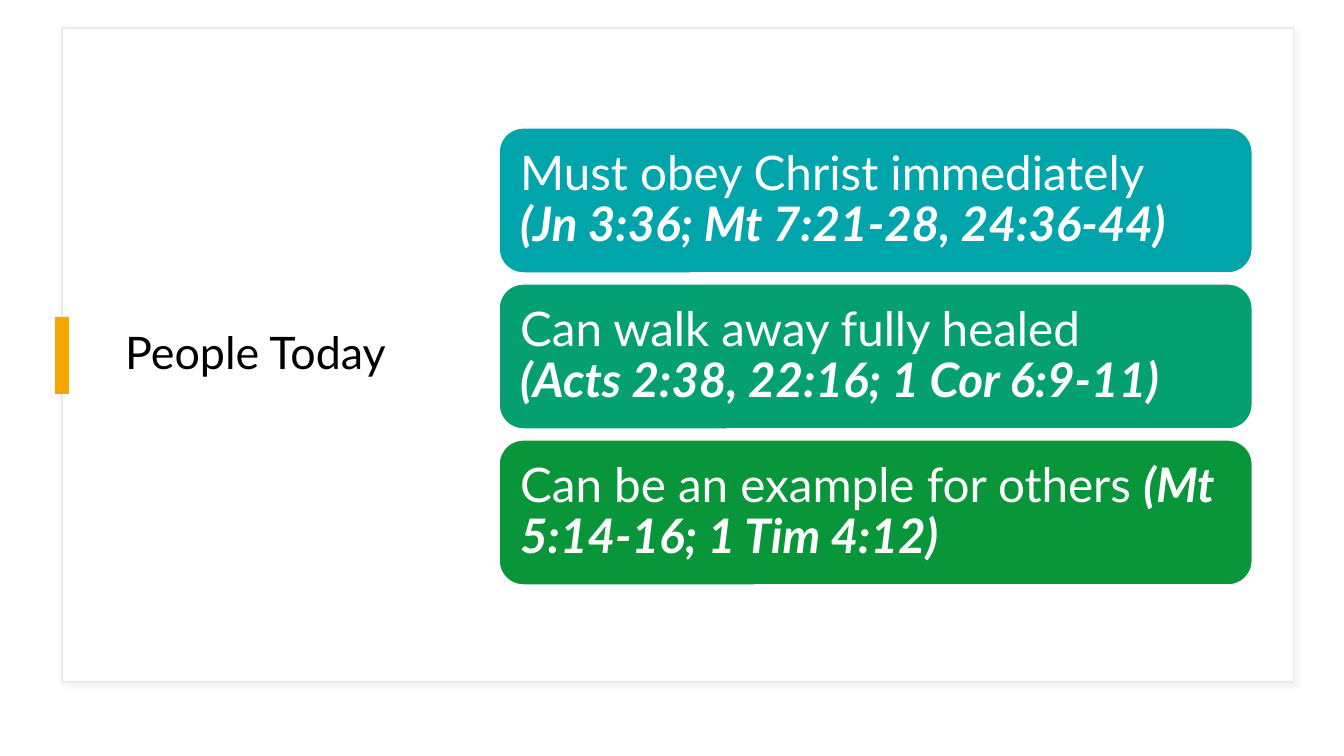
"""Build the People Today slide with its three scripture cards."""
import pptx
import pptx.dml.color
import pptx.enum.shapes
import pptx.enum.text
import pptx.oxml
import pptx.oxml.ns
import pptx.util

TITLE = "People Today"
CARDS = [
    ("Must obey Christ immediately\v", "(Jn 3:36; Mt 7:21-28, 24:36-44)", "00A5AB"),
    ("Can walk away fully healed\v", "(Acts 2:38, 22:16; 1 Cor 6:9-11)", "05A071"),
    ("Can be an example for others ", "(Mt 5:14-16; 1 Tim 4:12)", "09963B"),
]
FONT = "Lato"
WHITE, BLACK, GREY, AMBER = "FFFFFF", "000000", "E9E9E9", "F5A700"
FRAME_BOX = (62, 28, 1231, 654)
TITLE_BOX = (115, 55, 330, 600)
ACCENT_BOX = (55, 317, 14, 77)
CARD_BOX = (499, 128, 753, 145)
CARD_PITCH = 156
CARD_INSET = 21
SHADOW = (
    '<a:outerShdw %s blurRad="50800" dist="38100" dir="2700000" algn="tl" rotWithShape="0">'
    '<a:srgbClr val="D9D9D9"><a:alpha val="30000"/></a:srgbClr></a:outerShdw>'
    % pptx.oxml.ns.nsdecls("a")
)


def px(length):
    return pptx.util.Emu(round(length * 914400 / 100.8))


def color(value):
    return pptx.dml.color.RGBColor.from_string(value)


def add_block(slide, kind, box, fill, line=None):
    shape = slide.shapes.add_shape(kind, *map(px, box))
    shape.shadow.inherit = False
    shape.fill.solid()
    shape.fill.fore_color.rgb = color(fill)
    if line:
        shape.line.color.rgb = color(line)
        shape.line.width = pptx.util.Pt(1)
    else:
        shape.line.fill.background()
    return shape


def format_run(run, size, value, emphasis=False):
    run.font.name = FONT
    run.font.size = pptx.util.Pt(size)
    run.font.color.rgb = color(value)
    run.font.bold = run.font.italic = emphasis


def format_frame(text_frame):
    text_frame.word_wrap = True
    text_frame.auto_size = pptx.enum.text.MSO_AUTO_SIZE.NONE
    text_frame.vertical_anchor = pptx.enum.text.MSO_ANCHOR.MIDDLE
    paragraph = text_frame.paragraphs[0]
    paragraph.alignment = pptx.enum.text.PP_ALIGN.LEFT
    paragraph.line_spacing = 0.9
    return paragraph


def add_title(slide, frame):
    title = slide.shapes.title
    title.left, title.top, title.width, title.height = map(px, TITLE_BOX)
    title.text_frame.text = TITLE
    paragraph = format_frame(title.text_frame)
    format_run(paragraph.runs[0], 32, BLACK)
    frame.element.addnext(title.element)


def add_card(slide, index, claim, verses, fill):
    left, top, width, height = CARD_BOX
    box = (left, top + index * CARD_PITCH, width, height)
    kind = pptx.enum.shapes.MSO_SHAPE.ROUNDED_RECTANGLE
    card = add_block(slide, kind, box, fill, WHITE)
    text_frame = card.text_frame
    text_frame.margin_left = text_frame.margin_right = px(CARD_INSET - 7)
    text_frame.margin_top = text_frame.margin_bottom = px(CARD_INSET - 7)
    paragraph = format_frame(text_frame)
    paragraph.text = claim
    paragraph.add_run().text = verses
    for run in paragraph.runs:
        format_run(run, 34, WHITE, run.text == verses)


def main():
    presentation = pptx.Presentation()
    presentation.slide_width = pptx.util.Inches(13.33)
    presentation.slide_height = pptx.util.Inches(7.5)
    slide = presentation.slides.add_slide(presentation.slide_layouts[5])
    rectangle = pptx.enum.shapes.MSO_SHAPE.RECTANGLE
    frame = add_block(slide, rectangle, FRAME_BOX, WHITE, GREY)
    effects = frame.element.spPr.find(pptx.oxml.ns.qn("a:effectLst"))
    effects.append(pptx.oxml.parse_xml(SHADOW))
    add_title(slide, frame)
    add_block(slide, rectangle, ACCENT_BOX, AMBER)
    for index, card in enumerate(CARDS):
        add_card(slide, index, *card)
    presentation.save("out.pptx")


if __name__ == "__main__":
    main()
